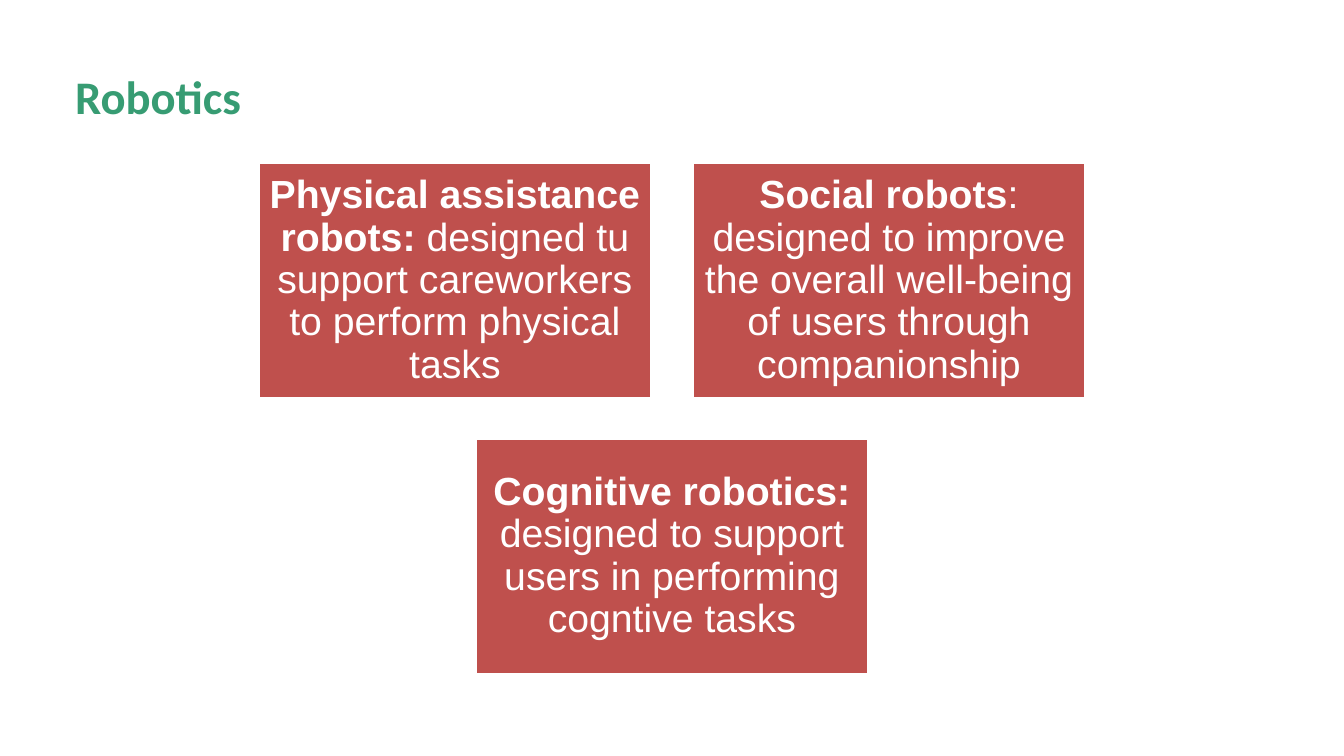
from pptx import Presentation
from pptx import util as u
from pptx.dml.color import RGBColor
from pptx.enum import shapes, text

COLOURS = {"title": "379C73", "card": "BF504D", "white": "FFFFFF"}
PAGE_WIDTH = 10
PAGE_HEIGHT = PAGE_WIDTH * 9 / 16
CARD_WIDTH, CARD_HEIGHT = 2.93, 1.76
COLUMN_GAP, ROW_GAP = 0.3, 0.29
CARDS_TOP = 1.21
CARD_ROWS = [
    [
        ("Physical assistance robots: ", "designed tu support careworkers to perform physical tasks"),
        ("Social robots", ": designed to improve the overall well-being of users through companionship"),
    ],
    [("Cognitive robotics: ", "designed to support users in performing cogntive tasks")],
]


def colour(name):
    return RGBColor.from_string(COLOURS[name])


def set_values(target, values):
    for name, value in values.items():
        setattr(target, name, value)


def format_frame(frame, inset, anchor):
    margins = {f"margin_{side}": u.Inches(inset) for side in ("left", "top", "right", "bottom")}
    set_values(frame, {**margins, "word_wrap": True, "vertical_anchor": anchor})


def add_span(para, words, font, size, bold, colour_name):
    span = para.add_run()
    span.text = words
    set_values(span.font, {"name": font, "size": u.Pt(size), "bold": bold})
    span.font.color.rgb = colour(colour_name)


def add_title(page, words):
    box = page.shapes.title
    set_values(box, {"left": u.Inches(0.56), "top": u.Inches(0.34),
                     "width": u.Inches(7.94), "height": u.Inches(0.42)})
    format_frame(box.text_frame, 0, text.MSO_ANCHOR.TOP)
    box.text_frame.auto_size = text.MSO_AUTO_SIZE.NONE
    para = box.text_frame.paragraphs[0]
    set_values(para, {"alignment": text.PP_ALIGN.LEFT, "line_spacing": 1.4, "space_before": u.Pt(0)})
    add_span(para, words, "Calibri", 25, True, "title")


def add_card(page, left, top, heading, description):
    card = page.shapes.add_shape(
        shapes.MSO_SHAPE.RECTANGLE, u.Inches(left), u.Inches(top),
        u.Inches(CARD_WIDTH), u.Inches(CARD_HEIGHT))
    card.shadow.inherit = False
    card.fill.solid()
    card.fill.fore_color.rgb = colour("card")
    card.line.color.rgb = colour("white")
    card.line.width = u.Pt(2)
    format_frame(card.text_frame, 0.08, text.MSO_ANCHOR.MIDDLE)
    para = card.text_frame.paragraphs[0]
    set_values(para, {"alignment": text.PP_ALIGN.CENTER, "line_spacing": 0.9})
    add_span(para, heading, "Arial", 21, True, "white")
    add_span(para, description, "Arial", 21, False, "white")


def add_card_rows(page, rows):
    for row_number, row in enumerate(rows):
        row_width = len(row) * (CARD_WIDTH + COLUMN_GAP) - COLUMN_GAP
        left = (PAGE_WIDTH - row_width) / 2
        top = CARDS_TOP + row_number * (CARD_HEIGHT + ROW_GAP)
        for column, (heading, description) in enumerate(row):
            add_card(page, left + column * (CARD_WIDTH + COLUMN_GAP), top, heading, description)


def main():
    deck = Presentation()
    set_values(deck, {"slide_width": u.Inches(PAGE_WIDTH), "slide_height": u.Inches(PAGE_HEIGHT)})
    page = deck.slides.add_slide(deck.slide_layouts.get_by_name("Title Only"))
    add_title(page, "Robotics")
    add_card_rows(page, CARD_ROWS)
    deck.save("out.pptx")


if __name__ == "__main__":
    main()
